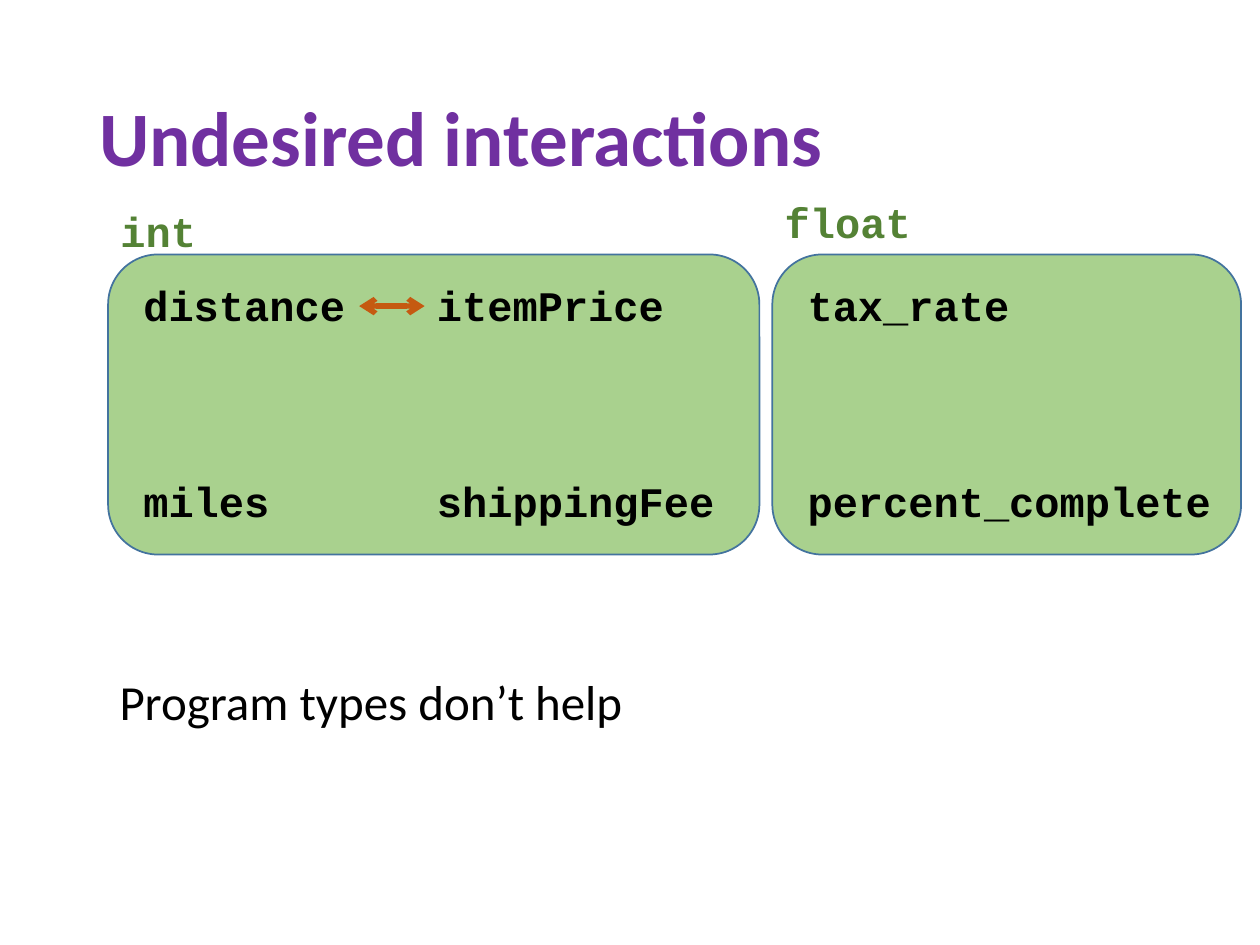
import pptx
import pptx.dml.color
import pptx.enum.shapes
import pptx.enum.text
import pptx.oxml.ns
import pptx.util
from lxml import etree

Cm = pptx.util.Cm
Pt = pptx.util.Pt


def color(hex_string):
    return pptx.dml.color.RGBColor.from_string(hex_string)


def add_text(text, left, top, width, height, size, font, hex_string, bold=True):
    box = slide.shapes.add_textbox(Cm(left), Cm(top), Cm(width), Cm(height))
    frame = box.text_frame
    frame.word_wrap = False
    frame.auto_size = pptx.enum.text.MSO_AUTO_SIZE.SHAPE_TO_FIT_TEXT
    run = frame.paragraphs[0].add_run()
    run.text = text
    run.font.size = Pt(size)
    run.font.name = font
    run.font.bold = bold
    run.font.color.rgb = color(hex_string)
    return frame


deck = pptx.Presentation()
deck.slide_width = Cm(25.4)
deck.slide_height = Cm(19.05)
slide = deck.slides.add_slide(deck.slide_layouts[6])

# Green panels, one per program type
for left, width in ((15.57, 9.45), (2.18, 13.13)):
    panel = slide.shapes.add_shape(
        pptx.enum.shapes.MSO_SHAPE.ROUNDED_RECTANGLE,
        Cm(left), Cm(5.13), Cm(width), Cm(6.05))
    panel.shadow.inherit = False
    panel.fill.solid()
    panel.fill.fore_color.rgb = color("A9D18E")
    panel.line.color.rgb = color("43739E")
    panel.line.width = Pt(1)

# Title
title = add_text("Undesired interactions", 1.75, 1.02, 21.9, 3.68,
                 44, "Calibri", "7030A0")
title.word_wrap = True
title.auto_size = pptx.enum.text.MSO_AUTO_SIZE.NONE
title.vertical_anchor = pptx.enum.text.MSO_ANCHOR.MIDDLE
title.paragraphs[0].line_spacing = 0.9

# Variables and type names: each monospaced letter adds the same width
variable_columns = (
    (2.64, ("distance", "miles")),
    (8.56, ("itemPrice", "shippingFee")),
    (16.03, ("tax_rate", "percent_complete")),
)
labels = [(name, left, top, "000000")
          for left, names in variable_columns
          for name, top in zip(names, (5.51, 9.47))]
labels += [("int", 2.18, 4.01, "548235"), ("float", 15.57, 3.84, "548235")]
for name, left, top, hex_string in labels:
    add_text(name, left, top, 0.51 + 0.51 * len(name), 1.28,
             24, "Courier New", hex_string)

# Double-headed arrow between distance and itemPrice
interaction = slide.shapes.add_connector(
    pptx.enum.shapes.MSO_CONNECTOR.STRAIGHT,
    Cm(7.24), Cm(6.17), Cm(8.56), Cm(6.17))
interaction.line.color.rgb = color("C55A11")
interaction.line.width = Pt(3)
outline = interaction.line._get_or_add_ln()
for end in ("a:headEnd", "a:tailEnd"):
    etree.SubElement(outline, pptx.oxml.ns.qn(end), type="arrow")
etree.SubElement(interaction._element.spPr, pptx.oxml.ns.qn("a:effectLst"))

# Conclusion
add_text("Program types don’t help", 2.16, 13.41, 10.77, 1.45,
         28, "Calibri", "000000", bold=False)

deck.save("out.pptx")
